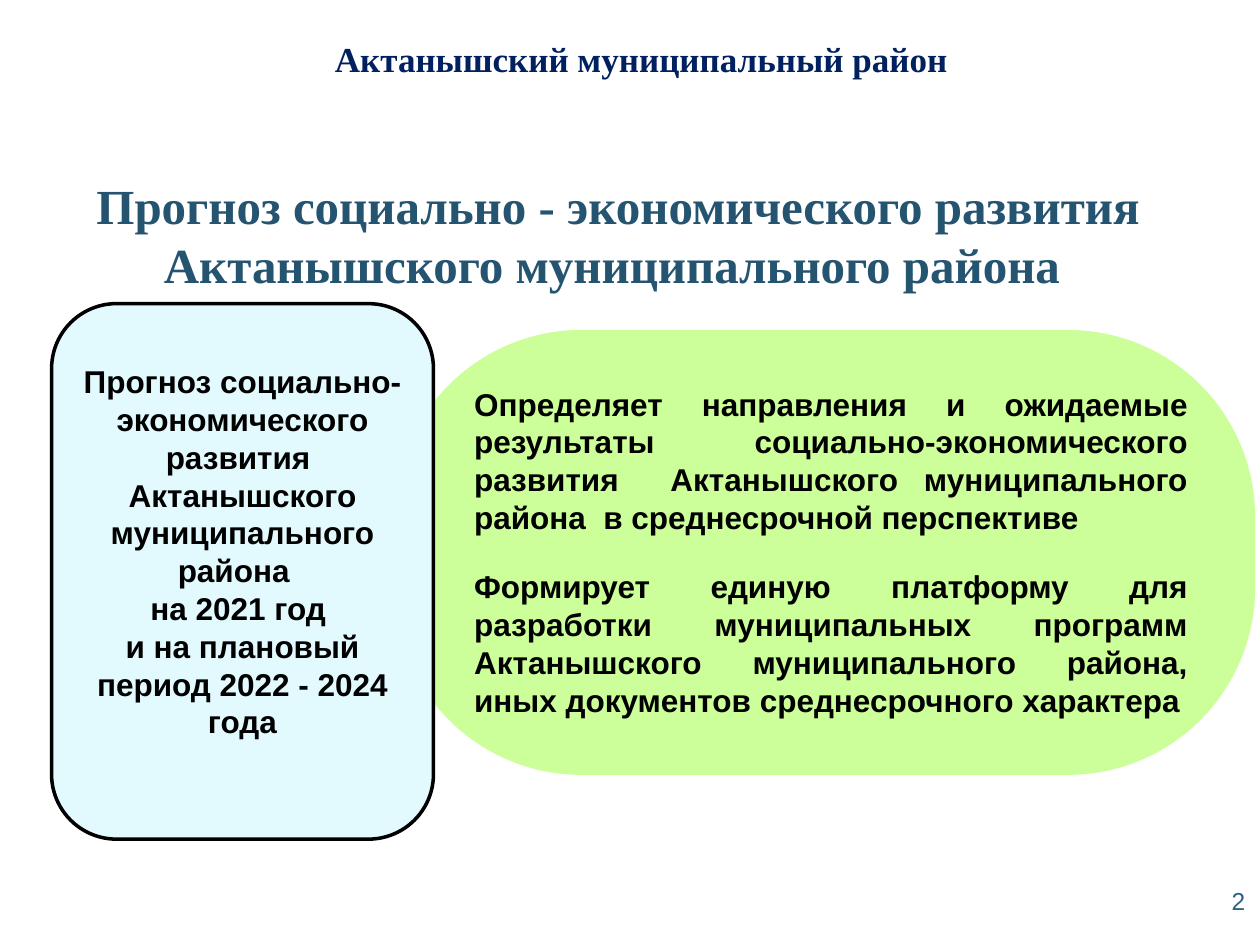
from pptx import Presentation
from pptx.dml.color import RGBColor
from pptx.enum.shapes import MSO_SHAPE
from pptx.enum.text import MSO_ANCHOR, PP_ALIGN
from pptx.util import Pt

NAVY = RGBColor(0x00, 0x20, 0x60)
TEAL = RGBColor(0x25, 0x54, 0x71)
NUMBER_BLUE = RGBColor(0x2C, 0x62, 0x84)
LIME = RGBColor(0xCC, 0xFF, 0x99)
PALE_BLUE = RGBColor(0xE2, 0xFA, 0xFE)
BLACK = RGBColor(0x00, 0x00, 0x00)

DISTRICT = ["Актанышский муниципальный район"]
TITLE = ["Прогноз социально - экономического развития Актанышского муниципального района "]
PURPOSES = [
    "Определяет направления и ожидаемые результаты социально-экономического развития  Актанышского муниципального района  в среднесрочной перспективе",
    "Формирует единую платформу для разработки муниципальных программ Актанышского муниципального района, иных документов среднесрочного характера",
]
FORECAST = [
    "Прогноз социально-экономического развития ",
    "Актанышского муниципального района  ",
    "на 2021 год ",
    "и на плановый период 2022 - 2024 года",
]
PAGE_NUMBER = ["2"]


def write(shape, lines, size, color, align, font="Arial", bold=True,
          anchor=MSO_ANCHOR.TOP, gap=0, indent=0):
    frame = shape.text_frame
    frame.word_wrap = True
    frame.vertical_anchor = anchor
    for index, line in enumerate(lines):
        para = frame.paragraphs[0] if index == 0 else frame.add_paragraph()
        para.text = line
        para.alignment = align
        if gap and index:
            para.space_before = Pt(gap)
        if indent:
            para._p.get_or_add_pPr().set("marL", str(Pt(indent)))
        para.font.name = font
        para.font.size = Pt(size)
        para.font.bold = bold
        para.font.color.rgb = color
    return frame


def add_text(page, left, top, width, height, lines, *style, **options):
    box = page.shapes.add_textbox(Pt(left), Pt(top), Pt(width), Pt(height))
    write(box, lines, *style, **options)


def add_panel(page, left, top, width, height, fill, rounding):
    panel = page.shapes.add_shape(MSO_SHAPE.ROUNDED_RECTANGLE,
                                  Pt(left), Pt(top), Pt(width), Pt(height))
    panel.adjustments[0] = rounding
    panel.shadow.inherit = False
    panel.fill.solid()
    panel.fill.fore_color.rgb = fill
    return panel


deck = Presentation()
deck.slide_width, deck.slide_height = Pt(720), Pt(540)
page = deck.slides.add_slide(deck.slide_layouts[6])

add_text(page, 184.3, 18, 521.3, 31.7, DISTRICT, 20, NAVY, PP_ALIGN.LEFT,
         font="Times New Roman")
add_text(page, 0, 94.3, 706.3, 79.2, TITLE, 28, TEAL, PP_ALIGN.CENTER,
         font="Times New Roman", anchor=MSO_ANCHOR.MIDDLE)

purpose_panel = add_panel(page, 225.4, 188.6, 491.8, 254.2, LIME, 0.42)
purpose_panel.line.fill.background()
purpose_frame = write(purpose_panel, PURPOSES, 18, BLACK, PP_ALIGN.JUSTIFY,
                      gap=18, indent=7.2)
purpose_frame.margin_top = purpose_frame.margin_bottom = 0

forecast_panel = add_panel(page, 29.5, 173.5, 218.2, 306, PALE_BLUE, 0.17)
forecast_panel.line.color.rgb = BLACK
forecast_panel.line.width = Pt(2)
forecast_frame = write(forecast_panel, FORECAST, 18, BLACK, PP_ALIGN.CENTER,
                       anchor=MSO_ANCHOR.MIDDLE)
forecast_frame.margin_bottom = Pt(26.6)

add_text(page, 550.8, 502.6, 167.8, 37.4, PAGE_NUMBER, 14, NUMBER_BLUE,
         PP_ALIGN.RIGHT, bold=False)

deck.save("out.pptx")
